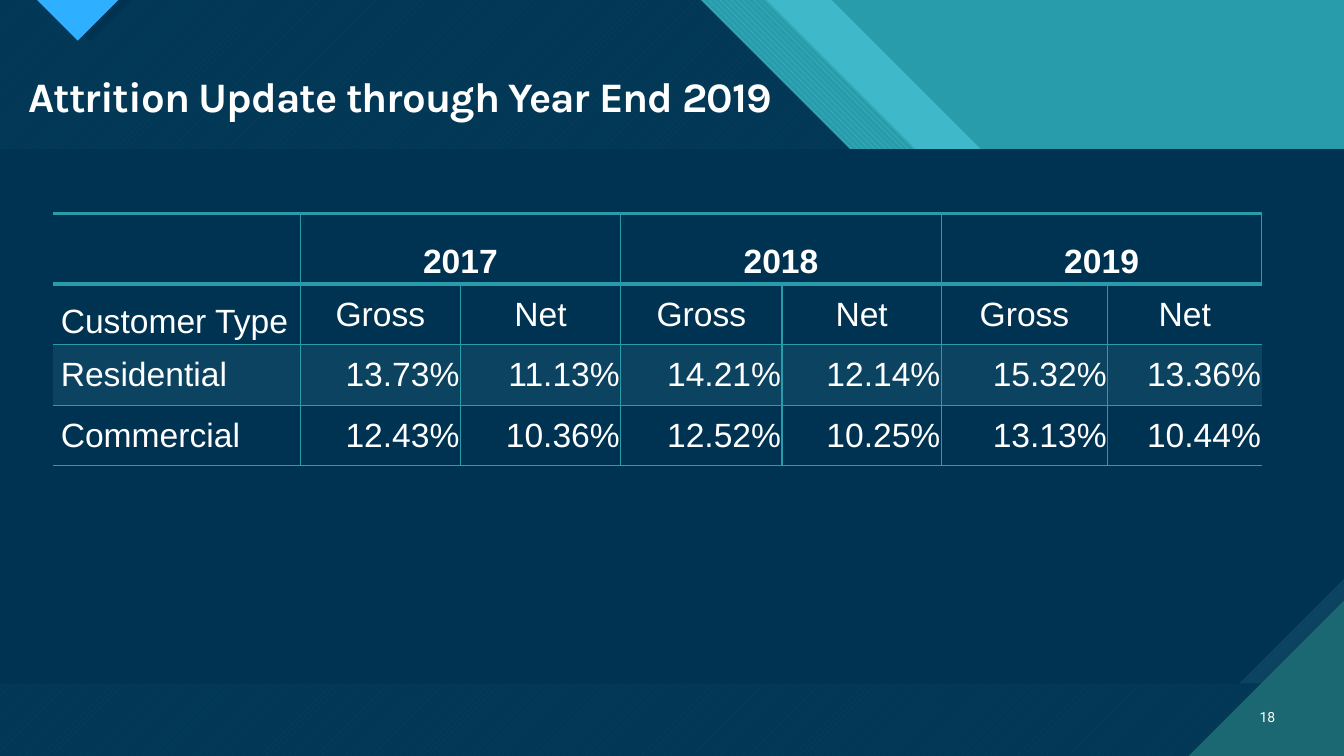
from lxml.etree import SubElement
from pptx import Presentation
from pptx.dml.color import RGBColor
from pptx.enum.dml import MSO_PATTERN
from pptx.enum.text import MSO_ANCHOR, MSO_AUTO_SIZE, PP_ALIGN
from pptx.oxml.ns import qn
from pptx.util import Pt

WIDTH, HEIGHT = 960, 540
BAND_TOP, BAND_BOTTOM = 106.6, 488.2
NAVY, BLUE, TEAL, CYAN = "003352", "0C4360", "299CAB", "47C3D3"
DEEP_TEAL, WHITE = "1B6872", "FFFFFF"
NO_STYLE = "{2D5ABB26-0587-4C30-8999-92F81FD0307C}"

COLUMNS = [176.4, 114.5, 114.5, 115.2, 113.8, 118.8, 110.2]
ROWS = [50.4, 43.2, 43.2, 43.2]
DATA = [
    ["", "2017", "", "2018", "", "2019", ""],
    ["Customer Type"] + ["Gross", "Net"] * 3,
    ["Residential", "13.73%", "11.13%", "14.21%", "12.14%", "15.32%", "13.36%"],
    ["Commercial", "12.43%", "10.36%", "12.52%", "10.25%", "13.13%", "10.44%"],
]


def rgb(color):
    return RGBColor.from_string(color)


def add_polygon(s, points, color, pattern=None, back=None, alpha=None):
    points = [(Pt(x), Pt(y)) for x, y in points]
    builder = s.shapes.build_freeform(*points[0], scale=1.0)
    builder.add_line_segments(points[1:], close=True)
    sp = builder.convert_to_shape()
    sp.shadow.inherit = False
    sp.line.fill.background()
    if pattern:
        sp.fill.patterned()
        sp.fill.pattern = pattern
        sp.fill.fore_color.rgb = rgb(color)
        sp.fill.back_color.rgb = rgb(back)
    else:
        sp.fill.solid()
        sp.fill.fore_color.rgb = rgb(color)
    if alpha:
        clr = sp._element.spPr.find(qn("a:solidFill"))[0]
        SubElement(clr, qn("a:alpha"), val=str(alpha * 1000))


def diagonal_sheet(x, depth=214):
    """Full-slide outline whose top right is cut at 45 degrees from x."""
    return [(0, 0), (x, 0), (x + depth, depth), (WIDTH, depth),
            (WIDTH, HEIGHT), (0, HEIGHT)]


def format_text(p, size, font, bold=False, align=PP_ALIGN.LEFT):
    p.alignment = align
    p.font.size = Pt(size)
    p.font.name = font
    p.font.bold = bold
    p.font.color.rgb = rgb(WHITE)


def add_background(s):
    s.background.fill.solid()
    s.background.fill.fore_color.rgb = rgb(TEAL)
    # Diagonal sheets
    add_polygon(s, diagonal_sheet(594), "3FB9C9")
    add_polygon(s, diagonal_sheet(547.2), CYAN, MSO_PATTERN.WIDE_DOWNWARD_DIAGONAL, TEAL)
    add_polygon(s, diagonal_sheet(500.4), CYAN, MSO_PATTERN.WIDE_UPWARD_DIAGONAL, DEEP_TEAL)
    add_polygon(s, diagonal_sheet(500.4), NAVY, alpha=90)
    # Top marker with its shade
    add_polygon(s, [(35, 0), (94, 0), (64.5, 29.5)], NAVY)
    add_polygon(s, [(26.5, 0), (84.5, 0), (55.5, 29)], "2FAFFF")
    # Content panel with a cut corner
    panel = [(0, BAND_TOP), (WIDTH, BAND_TOP)]
    add_polygon(s, panel + [(WIDTH, BAND_BOTTOM), (0, BAND_BOTTOM)], BLUE)
    cut = 75
    add_polygon(s, panel + [(WIDTH, BAND_BOTTOM - cut), (WIDTH - cut, BAND_BOTTOM),
                            (0, BAND_BOTTOM)], NAVY)
    # Page corner
    add_polygon(s, [(849, HEIGHT), (WIDTH, HEIGHT), (WIDTH, 429)], DEEP_TEAL)


def add_title(s, text):
    title = s.shapes.title
    s.shapes._spTree.append(title._element)
    title.left, title.top, title.width, title.height = Pt(13), Pt(50.4), Pt(882.7), Pt(40.3)
    tf = title.text_frame
    tf.text = text
    tf.auto_size = MSO_AUTO_SIZE.NONE
    tf.vertical_anchor = MSO_ANCHOR.MIDDLE
    p = tf.paragraphs[0]
    p.line_spacing = 0.9
    format_text(p, 30, "Karla", bold=True)
    p.runs[0]._r.get_or_add_rPr().set("spc", "-70")


def set_borders(cell, widths):
    tcPr = cell._tc.get_or_add_tcPr()
    for side in "LRTB":
        if side in widths:
            ln = SubElement(tcPr, qn(f"a:ln{side}"), w=str(Pt(widths[side])))
            fill = SubElement(ln, qn("a:solidFill"))
            SubElement(fill, qn("a:srgbClr"), val=TEAL)


def format_cell(cell, row, col):
    # Borders: thick around the header, open at the outer sides below it
    widths = {"T": 3 if row < 2 else 1, "B": 3 if row == 0 else 1}
    if col > 0:
        widths["L"] = 1
    if col < len(COLUMNS) - 1 or row == 0:
        widths["R"] = 1
    set_borders(cell, widths)
    if row == 2:
        cell.fill.solid()
        cell.fill.fore_color.rgb = rgb(BLUE)
    else:
        cell.fill.background()
    # Text
    is_value = row > 1 and col > 0
    side, end = (0.7, 0.4) if is_value else (5.4, 2.9)
    cell.margin_left = cell.margin_right = Pt(side)
    cell.margin_top = cell.margin_bottom = Pt(end)
    at_bottom = row == 0 or (row == 1 and col == 0)
    cell.vertical_anchor = MSO_ANCHOR.BOTTOM if at_bottom else MSO_ANCHOR.MIDDLE
    align = PP_ALIGN.RIGHT if is_value else PP_ALIGN.CENTER if col else PP_ALIGN.LEFT
    format_text(cell.text_frame.paragraphs[0], 24, "Arial", row == 0, align)


def add_attrition_table(s):
    frame = s.shapes.add_table(len(ROWS), len(COLUMNS), Pt(38), Pt(152.6),
                               Pt(sum(COLUMNS)), Pt(sum(ROWS)))
    table = frame.table
    table.first_row = table.horz_banding = False
    table._tbl.tblPr.find(qn("a:tableStyleId")).text = NO_STYLE
    for column, width in zip(table.columns, COLUMNS):
        column.width = Pt(width)
    for i, (height, values) in enumerate(zip(ROWS, DATA)):
        table.rows[i].height = Pt(height)
        for j, value in enumerate(values):
            cell = table.cell(i, j)
            cell.text = value
            format_cell(cell, i, j)
    for j in (1, 3, 5):
        table.cell(0, j).merge(table.cell(0, j + 1))


def add_page_number(s, number):
    tf = s.shapes.add_textbox(Pt(886.3), Pt(497.5), Pt(31.7), Pt(28.8)).text_frame
    tf.word_wrap = True
    tf.vertical_anchor = MSO_ANCHOR.MIDDLE
    tf.text = number
    format_text(tf.paragraphs[0], 10, "Roboto", align=PP_ALIGN.RIGHT)


def main():
    prs = Presentation()
    prs.slide_width, prs.slide_height = Pt(WIDTH), Pt(HEIGHT)
    s = prs.slides.add_slide(prs.slide_layouts[5])
    add_background(s)
    add_title(s, "Attrition Update through Year End 2019")
    add_attrition_table(s)
    add_page_number(s, "18")
    prs.save("out.pptx")


if __name__ == "__main__":
    main()
